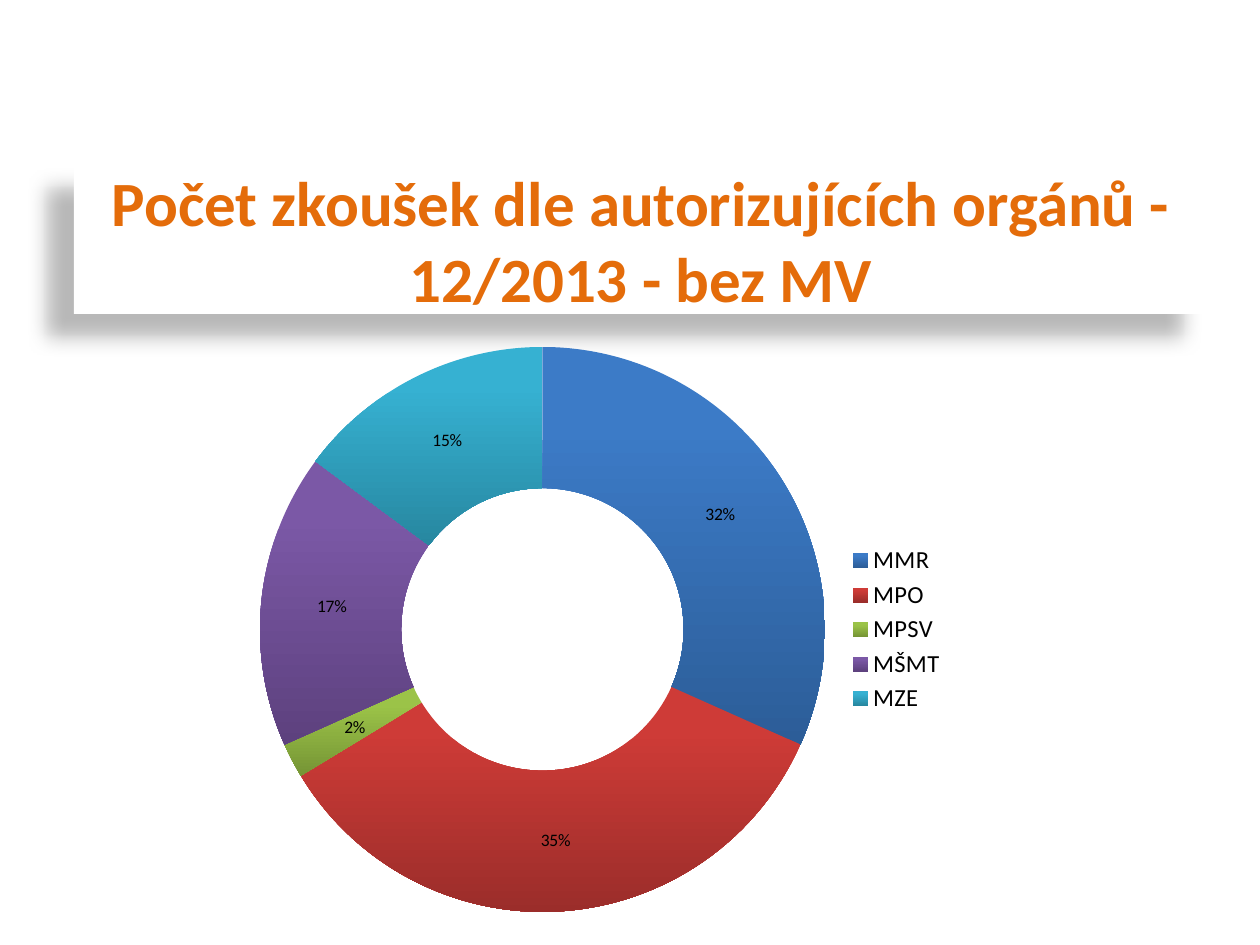
from lxml.etree import SubElement
from pptx import Presentation
from pptx.chart.data import CategoryChartData
from pptx.dml.color import RGBColor
from pptx.enum.chart import XL_CHART_TYPE as ChartType, XL_LEGEND_POSITION as LegendPosition
from pptx.enum.shapes import MSO_SHAPE as Preset
from pptx.enum.text import MSO_ANCHOR as Anchor, PP_ALIGN as Align
from pptx.oxml import parse_xml
from pptx.oxml.ns import nsdecls, qn
from pptx.util import Pt

PX = 914400 // 126
THEME = {
    "font": "Calibri",
    "white": RGBColor.from_string("FFFFFF"),
    "black": RGBColor.from_string("000000"),
    "title": RGBColor.from_string("E46C0A"),
    "title_size": Pt(36),
    "legend_size": Pt(14),
    "label_size": Pt(10),
}
# Authority, share of exams, gradient colour at the top and at the bottom
AUTHORITIES = [
    ("MMR", 32, "3C7BC7", "2C5D98"),
    ("MPO", 35, "CE3B37", "9B2D2A"),
    ("MPSV", 2, "9BC348", "769535"),
    ("MŠMT", 17, "7B58A6", "5D417E"),
    ("MZE", 15, "36B1D2", "2787A0"),
]
CHART_BOX = (243, 314, 712, 631)
RING_BOX = (260, 347, 565, 565)
LEGEND_BOX = (844, 541, 105, 177)


def set_font(font, **values):
    for name, value in {"name": THEME["font"], **values}.items():
        if name == "color":
            font.color.rgb = value
        else:
            setattr(font, name, value)


def place_in_chart(element, box, *targets):
    """Give a chart part a fixed place, as fractions of the chart frame."""
    old = element.find(qn("c:layout"))
    if old is not None:
        element.remove(old)
    left, top, width, height = CHART_BOX
    values = {
        "x": (box[0] - left) / width,
        "y": (box[1] - top) / height,
        "w": box[2] / width,
        "h": box[3] / height,
    }
    layout = parse_xml(f"<c:layout {nsdecls('c')}/>")
    manual = SubElement(layout, qn("c:manualLayout"))
    for tag, value in [*targets, ("xMode", "edge"), ("yMode", "edge"), *values.items()]:
        SubElement(manual, qn(f"c:{tag}")).set("val", str(value))
    return layout


presentation = Presentation()
presentation.slide_width, presentation.slide_height = 1260 * PX, 945 * PX
slide = presentation.slides.add_slide(presentation.slide_layouts[6])

# Title panel with a soft shadow to the lower left
title = slide.shapes.add_shape(
    Preset.RECTANGLE, *(n * PX for n in (74, 165, 1134, 149)))
title.fill.solid()
title.fill.fore_color.rgb = THEME["white"]
title.line.fill.background()
title.shadow.inherit = False
effects = title._element.spPr.find(qn("a:effectLst"))
effects.append(parse_xml(
    f'<a:outerShdw {nsdecls("a")} blurRad="{Pt(11.8)}" dist="{Pt(19.7)}" '
    f'dir="{141 * 60000}" algn="ctr" rotWithShape="0">'
    '<a:srgbClr val="000000"><a:alpha val="28000"/></a:srgbClr></a:outerShdw>'))
frame = title.text_frame
frame.word_wrap = True
frame.vertical_anchor = Anchor.MIDDLE
paragraph = frame.paragraphs[0]
paragraph.text = "Počet zkoušek dle autorizujících orgánů - 12/2013 - bez MV"
paragraph.alignment = Align.CENTER
set_font(paragraph.font, size=THEME["title_size"], bold=True, color=THEME["title"])

# Doughnut of exams by authority
data = CategoryChartData()
data.categories = [authority[0] for authority in AUTHORITIES]
data.add_series("Series 1", [authority[1] for authority in AUTHORITIES])
chart = slide.shapes.add_chart(
    ChartType.DOUGHNUT, *(n * PX for n in CHART_BOX), data).chart
chart.has_title = False
set_font(chart.font, size=THEME["label_size"], color=THEME["black"])

plot = chart.plots[0]
plot.vary_by_categories = True
plot._element.find(qn("c:holeSize")).set("val", "50")
plot.has_data_labels = True
labels = plot.data_labels
for name, value in {"show_percentage": True, "show_value": False,
                    "number_format": "0%", "number_format_is_linked": False}.items():
    setattr(labels, name, value)
set_font(labels.font, size=THEME["label_size"], color=THEME["black"])

for index, (_, _, *colours) in enumerate(AUTHORITIES):
    point_format = plot.series[0].points[index].format
    point_format.line.fill.background()
    fill = point_format.fill
    fill.gradient()
    fill.gradient_angle = 270
    for stop, colour, position in zip(fill.gradient_stops, colours, (0.2, 1)):
        stop.color.rgb = RGBColor.from_string(colour)
        stop.position = position

chart.has_legend = True
legend = chart.legend
legend.position = LegendPosition.RIGHT
legend.include_in_layout = False
set_font(legend.font, size=THEME["legend_size"], color=THEME["black"])

plot_area = chart._chartSpace.chart.plotArea
plot_area.insert(0, place_in_chart(plot_area, RING_BOX, ("layoutTarget", "inner")))
legend_layout = place_in_chart(legend._element, LEGEND_BOX)
legend._element.find(qn("c:legendPos")).addnext(legend_layout)

presentation.save("out.pptx")
